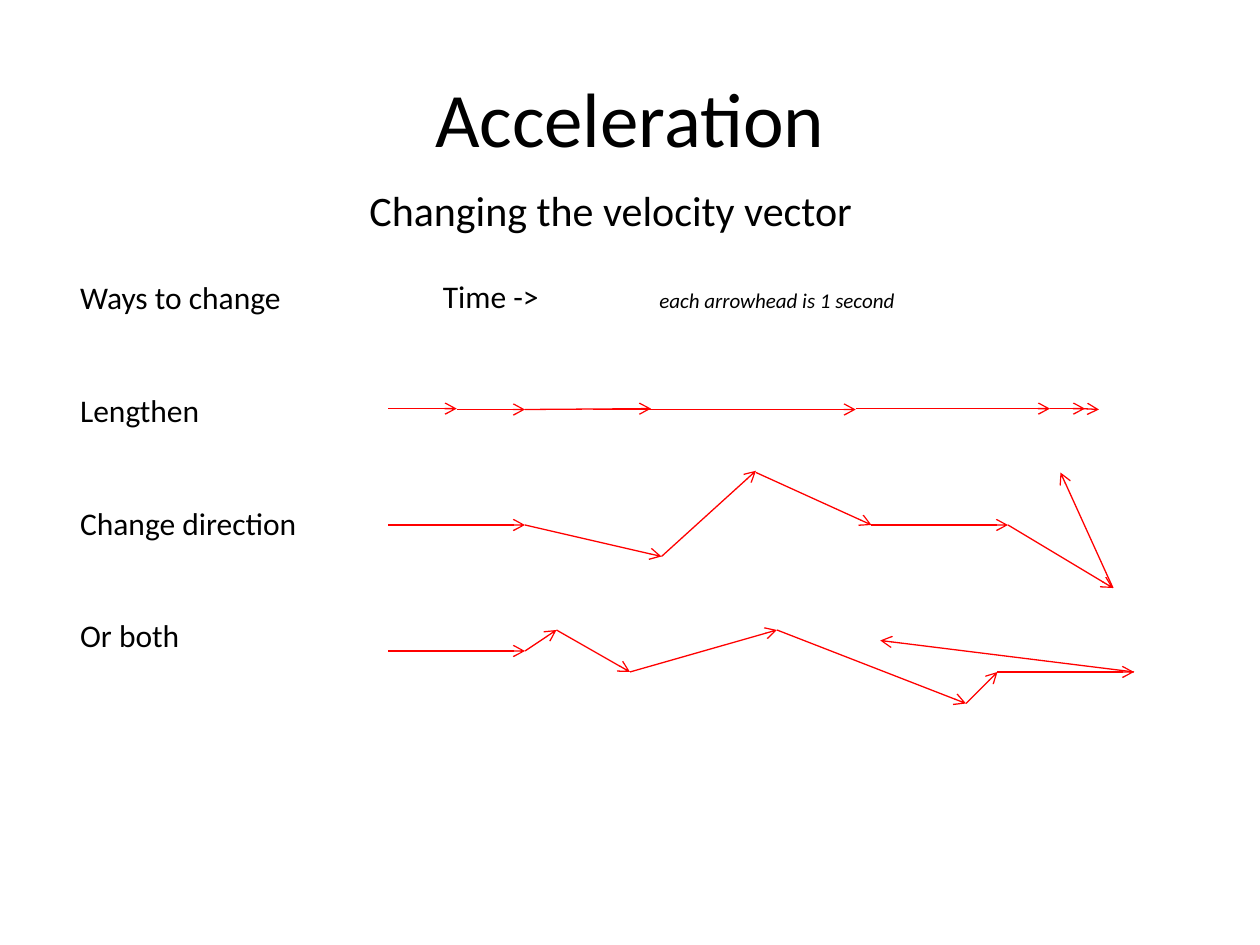
import pptx
import pptx.util
import pptx.dml.color
import pptx.enum.shapes
import pptx.enum.text
import pptx.oxml.ns
import lxml.etree

Pt = pptx.util.Pt
PP_ALIGN = pptx.enum.text.PP_ALIGN
ANCHOR = pptx.enum.text.MSO_ANCHOR
COLORS = {"text": "000000", "arrow": "FF0000"}
FONT = "Calibri"

WAYS = ["Ways to change", "Lengthen", "Change direction", "Or both"]
LABEL_GAP = 42.8

# Each row: left, top, and chains of arrow tips measured from that corner.
ARROW_ROWS = [
    (222, 233.5, [
        [(0, 0), (39, 0)],
        [(39, 0.5), (78, 0.5), (150, 0)],
        [(117, 0.5), (267, 0.5)],
        [(267, 0), (378, 0), (398, 0)],
        [(396, 0), (406, 0.5)],
    ]),
    (222, 300, [
        [(0, 0), (78, 0), (156, 18), (210, -31)],
        [(210, -30), (276, 0), (354, 0), (414, 36), (384, -30)],
    ]),
    (222, 372, [
        [(0, 0), (78, 0), (96, -12), (138, 12), (222, -12),
         (330, 30), (348, 12), (426, 12), (281, -6)],
    ]),
]


def add_run(paragraph, text, size, italic=False):
    run = paragraph.add_run()
    run.text = text
    style = {"name": FONT, "size": Pt(size), "italic": italic}
    for attribute, value in style.items():
        setattr(run.font, attribute, value)
    run.font.color.rgb = pptx.dml.color.RGBColor.from_string(COLORS["text"])


def add_frame(slide, box, anchor=ANCHOR.TOP, wrap=True):
    frame = slide.shapes.add_textbox(*map(Pt, box)).text_frame
    frame.word_wrap = wrap
    frame.vertical_anchor = anchor
    return frame


def add_heading(slide, box, text, size, align=PP_ALIGN.LEFT, anchor=ANCHOR.TOP):
    heading = add_frame(slide, box, anchor).paragraphs[0]
    heading.alignment = align
    add_run(heading, text, size)


def add_way_labels(slide, box):
    frame = add_frame(slide, box, wrap=False)
    for index, way in enumerate(WAYS):
        label = frame.add_paragraph() if index else frame.paragraphs[0]
        label.space_before = Pt(LABEL_GAP if index else 0)
        add_run(label, way, 18)


def add_time_key(slide, box, note_offset):
    """Place the time caption, with its note at a tab stop."""
    caption = add_frame(slide, box).paragraphs[0]
    qn = pptx.oxml.ns.qn
    tabs = lxml.etree.SubElement(caption._p.get_or_add_pPr(), qn("a:tabLst"))
    lxml.etree.SubElement(tabs, qn("a:tab"), pos=str(Pt(note_offset)), algn="l")
    add_run(caption, "Time ->\t", 18)
    add_run(caption, "each arrowhead is 1 second", 12, italic=True)


def add_arrow(slide, start, end):
    arrow = slide.shapes.add_connector(
        pptx.enum.shapes.MSO_CONNECTOR.STRAIGHT, *map(Pt, start + end))
    arrow.line.width = Pt(0.75)
    arrow.line.color.rgb = pptx.dml.color.RGBColor.from_string(COLORS["arrow"])
    qn = pptx.oxml.ns.qn
    lxml.etree.SubElement(arrow.line._get_or_add_ln(), qn("a:tailEnd"), type="arrow")
    lxml.etree.SubElement(arrow._element.spPr, qn("a:effectLst"))


def add_arrow_row(slide, left, top, chains):
    for chain in chains:
        tips = [(left + x, top + y) for x, y in chain]
        for start, end in zip(tips, tips[1:]):
            add_arrow(slide, start, end)


def main():
    deck = pptx.Presentation()
    deck.slide_width, deck.slide_height = Pt(720), Pt(540)
    slide = deck.slides.add_slide(deck.slide_layouts[6])
    add_heading(slide, (36, 21.6, 648, 90), "Acceleration", 44,
                PP_ALIGN.CENTER, ANCHOR.MIDDLE)
    add_heading(slide, (204, 102, 321, 48), "Changing the velocity vector", 24)
    add_way_labels(slide, (38.7, 155.5, 140, 225.4))
    add_time_key(slide, (246, 154.8, 346, 51), note_offset=123.7)
    for left, top, chains in ARROW_ROWS:
        add_arrow_row(slide, left, top, chains)
    deck.save("out.pptx")


if __name__ == "__main__":
    main()
